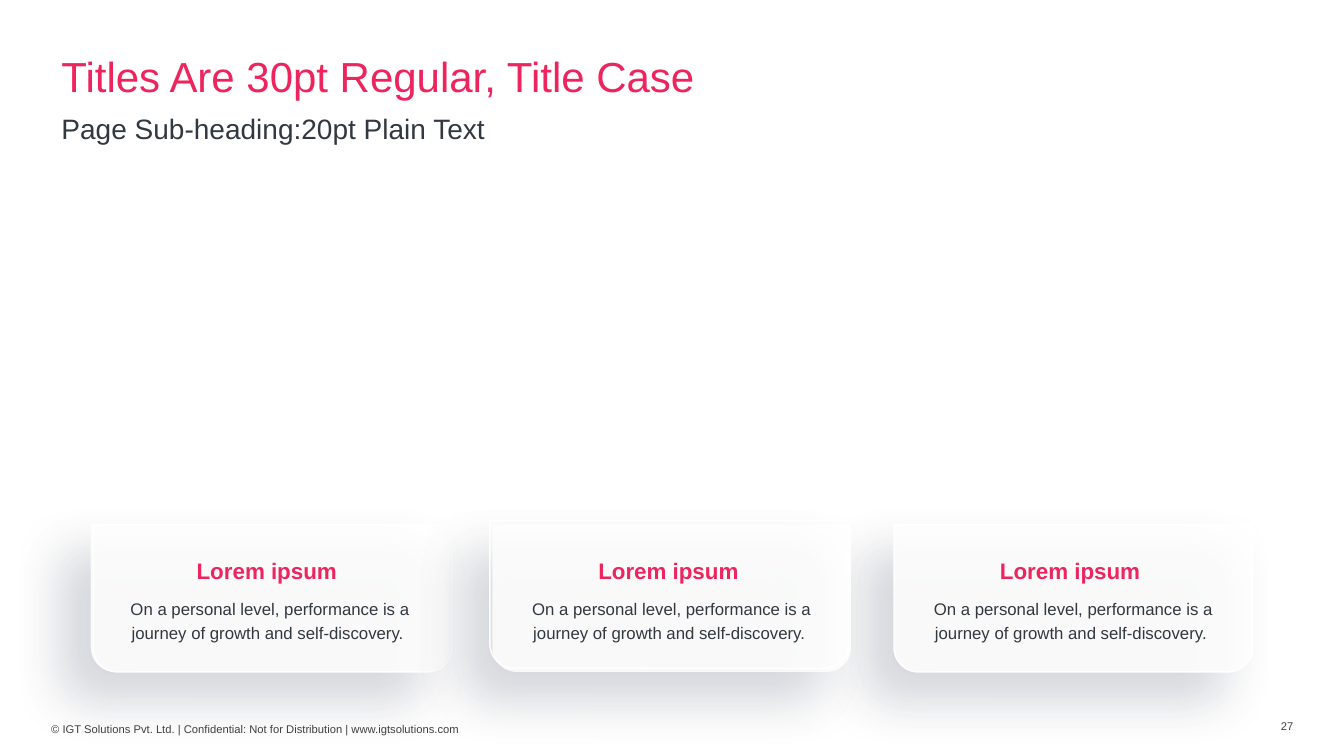
from lxml.etree import SubElement
from pptx import Presentation
from pptx.dml.color import RGBColor
from pptx.enum.shapes import MSO_SHAPE
from pptx.enum.text import MSO_ANCHOR, MSO_AUTO_SIZE, PP_ALIGN
from pptx.oxml import parse_xml
from pptx.oxml.ns import nsdecls, qn
from pptx.util import Pt

PINK, ORANGE, WHITE, SLATE, GREY = "ED245D", "F15A29", "FFFFFF", "32383F", "414042"
SHADOW = f"""<a:effectLst {nsdecls("a")}>
  <a:outerShdw blurRad="{Pt(36)}" dist="{Pt(29)}" dir="8100000" algn="tr" rotWithShape="0">
    <a:srgbClr val="283250"><a:alpha val="16000"/></a:srgbClr>
  </a:outerShdw>
</a:effectLst>"""


def style_text(shape, size, colors, bold=False):
    """Format the first paragraph; two (colour, position) pairs give a gradient."""
    font = shape.text_frame.paragraphs[0].runs[0].font
    font.name, font.size, font.bold = "Arial", Pt(size), bold
    if isinstance(colors, str):
        font.fill.solid()
        font.fill.fore_color.rgb = RGBColor.from_string(colors)
        return font
    font.fill.gradient()
    font.fill.gradient_angle = 0
    for stop, (color, position) in zip(font.fill.gradient_stops, colors):
        stop.color.rgb = RGBColor.from_string(color)
        stop.position = position
    return font


def add_text(left, top, width, height, text):
    box = page.shapes.add_textbox(Pt(left), Pt(top), Pt(width), Pt(height))
    box.text_frame.word_wrap = True
    box.text_frame.text = text
    return box


deck = Presentation()
deck.slide_width, deck.slide_height = Pt(960), Pt(540)
page = deck.slides.add_slide(deck.slide_layouts[1])

# Title and sub-heading
title, subheading = page.shapes.title, page.placeholders[1]
headings = [
    (title, "Titles Are 30pt Regular, Title Case", 36.7, 36.7, 887, 54.7),
    (subheading, "Page Sub-heading:20pt Plain Text", 36.7, 78.5, 795, 28),
]
for holder, text, left, top, width, height in headings:
    holder.left, holder.top, holder.width, holder.height = map(Pt, (left, top, width, height))
    frame = holder.text_frame
    frame.text = text
    frame.auto_size = MSO_AUTO_SIZE.NONE
    frame.vertical_anchor = MSO_ANCHOR.TOP
    para = frame.paragraphs[0]
    para.alignment = PP_ALIGN.LEFT
    para.line_spacing = 0.9
    para.space_before = Pt(0)

title_font = style_text(title, 30, [(PINK, 0.3), (ORANGE, 1)])
gradient = title_font.fill._xPr.find(qn("a:gradFill"))
gradient.remove(gradient.find(qn("a:lin")))
circle = SubElement(gradient, qn("a:path"), path="circle")
SubElement(circle, qn("a:fillToRect"), t="100000", r="100000")

style_text(subheading, 20, SLATE)
subheading_props = subheading.text_frame.paragraphs[0]._p.get_or_add_pPr()
subheading_props.set("marL", "0")
subheading_props.set("indent", "0")
SubElement(subheading_props, qn("a:buNone"))

# Footer
copyright_line = add_text(
    29.5, 512.6, 766, 28.8,
    "© IGT Solutions Pvt. Ltd. | Confidential: Not for Distribution | www.igtsolutions.com")
page_number = add_text(907.9, 510.5, 31.7, 28.8, "27")
for box in (copyright_line, page_number):
    style_text(box, 8, GREY)

# Cards: a white base under a translucent pane, both with a soft shadow
COLUMN_STEP = 286.9
pane_shifts = [(2, 0, 0), (0, 1.8, 0), (1, -1.8, -2.6)]
for column, shift_x, shift_y in pane_shifts:
    left = 64.8 + column * COLUMN_STEP
    for is_pane, x, y in [(False, left, 374.6), (True, left + shift_x, 374.6 + shift_y)]:
        card = page.shapes.add_shape(
            MSO_SHAPE.ROUND_2_SAME_RECTANGLE, Pt(x), Pt(y), Pt(256.1), Pt(105.4))
        card.adjustments[0], card.adjustments[1] = 0, 0.165
        card.fill.solid()
        card.fill.fore_color.rgb = RGBColor.from_string(WHITE)
        if is_pane:
            color = card.fill._xPr.find(qn("a:solidFill"))[0]
            SubElement(color, qn("a:alpha"), val="18000")
            card.line.color.rgb = RGBColor.from_string(WHITE)
            card.line.width = Pt(1)
        else:
            card.line.fill.background()
        card._element.spPr.append(parse_xml(SHADOW))

for column in range(3):
    offset = column * COLUMN_STEP
    heading = add_text(106.4 + offset, 394.6, 172.8, 26.6, "Lorem ipsum ")
    style_text(heading, 16, [(PINK, 0.11), (ORANGE, 0.8)], bold=True)
    body = add_text(
        71.2 + offset, 421.2, 243.4, 41,
        "On a personal level, performance is a journey of growth and self-discovery. ")
    style_text(body, 12, SLATE)
    body.text_frame.paragraphs[0].line_spacing = 1.2
    for box in (heading, body):
        box.text_frame.auto_size = MSO_AUTO_SIZE.SHAPE_TO_FIT_TEXT
        box.text_frame.paragraphs[0].alignment = PP_ALIGN.CENTER

deck.save("out.pptx")
